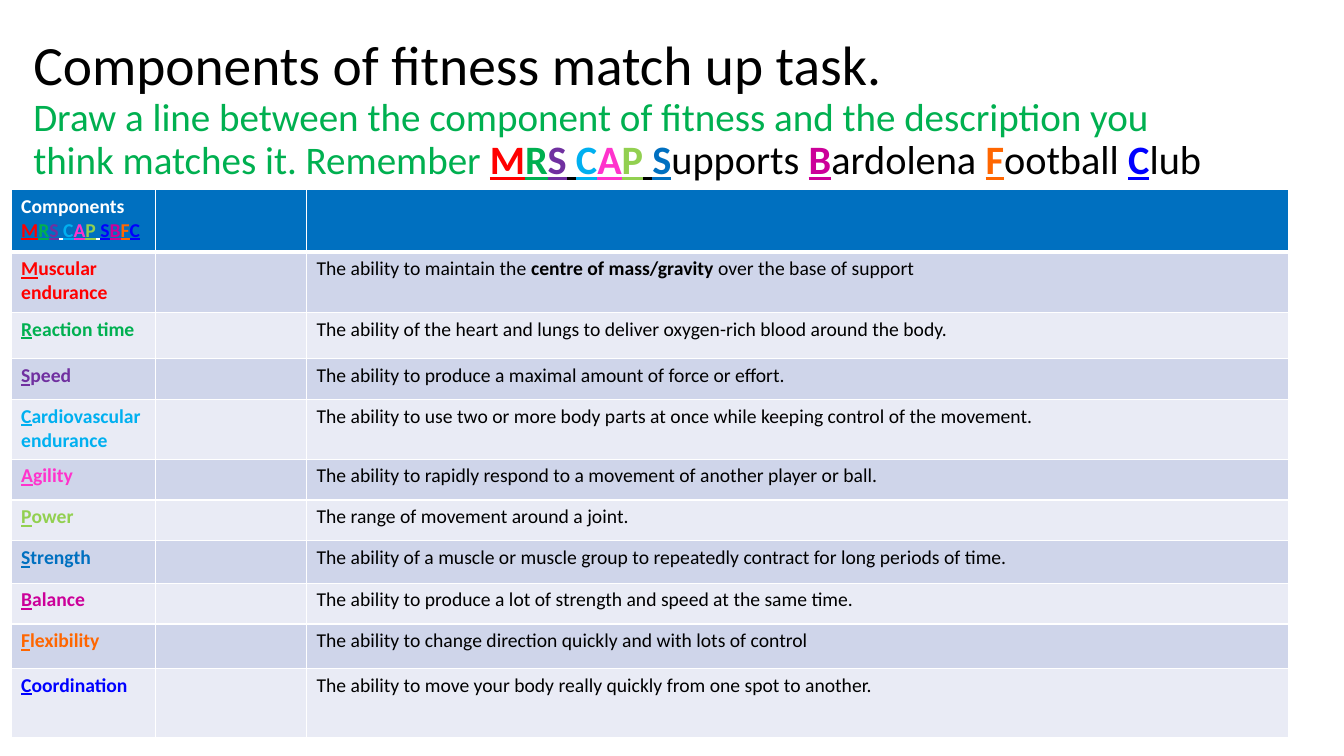
from lxml.etree import SubElement
from pptx import Presentation
from pptx.dml.color import RGBColor
from pptx.enum.text import MSO_ANCHOR, MSO_AUTO_SIZE, PP_ALIGN
from pptx.oxml.ns import qn
from pptx.util import Emu, Pt

PX = 9144
COLOURS = {
    "black": "000000", "white": "FFFFFF", "header": "0070C0",
    "odd": "CFD5EA", "even": "E9EBF5", "red": "FF0000", "green": "00B050",
    "purple": "7030A0", "sky": "00B0F0", "pink": "FF33CC", "lime": "92D050",
    "azure": "0070C0", "magenta": "CC0099", "orange": "FF6600", "blue": "0000FF",
}
KEY = {"bold": True, "underline": True}
PLAIN = {"bold": False, "underline": False}
COMPONENTS = [
    ("Muscular endurance", "red", 60,
     ["The ability to maintain the ", "centre of mass/gravity ", "over the base of support"]),
    ("Reaction time", "green", 46,
     ["The ability of the heart and lungs to deliver oxygen-rich blood around the body."]),
    ("Speed", "purple", 40,
     ["The ability to produce a maximal amount of force or effort."]),
    ("Cardiovascular endurance", "sky", 59,
     ["The ability to use two or more body parts at once while keeping control of the movement."]),
    ("Agility", "pink", 40,
     ["The ability to rapidly respond to a movement of another player or ball."]),
    ("Power", "lime", 40, ["The range of movement around a joint."]),
    ("Strength", "azure", 42,
     ["The ability of a muscle or muscle group to repeatedly contract for long periods of time."]),
    ("Balance", "magenta", 40,
     ["The ability to produce a lot of strength and speed at the same time."]),
    ("Flexibility", "orange", 44,
     ["The ability to change direction quickly and with lots of control"]),
    ("Coordination", "blue", 69,
     ["The ability to move your body really quickly from one spot to another."]),
]
COLUMNS = [143, 150, 974]
HEADER_HEIGHT = 62


def initials(letters, colours, gap):
    return [(letter, gap if letter == " " else next(colours), KEY) for letter in letters]


class Sheet:
    """Holds the style and the current slide, and adds its elements."""

    def __init__(self, deck, font):
        self.font = font
        self.page = deck.slides.add_slide(deck.slide_layouts[5])

    def colour(self, name):
        return RGBColor.from_string(COLOURS[name])

    def add_spans(self, para, spans, size):
        for text, colour, extra in spans:
            span = para.add_run()
            span.text = text
            values = {"name": self.font, "size": Pt(size), **extra}
            for name, value in values.items():
                setattr(span.font, name, value)
            span.font.color.rgb = self.colour(colour)

    def title(self, place, heading, spans):
        box = self.page.shapes.title
        for name, value in zip(("left", "top", "width", "height"), place):
            setattr(box, name, Emu(value * PX))
        frame = box.text_frame
        layout = {"word_wrap": True, "auto_size": MSO_AUTO_SIZE.NONE,
                  "vertical_anchor": MSO_ANCHOR.MIDDLE}
        for name, value in layout.items():
            setattr(frame, name, value)
        para = frame.paragraphs[0]
        para.alignment = PP_ALIGN.LEFT
        para.line_spacing = 0.9
        self.add_spans(para, [(heading, "black", PLAIN)], 39.6)
        para.add_line_break()
        self.add_spans(para, spans[:1], 27.9)
        self.add_spans(para, spans[1:], 28.8)

    def table(self, left, top, columns, heights):
        frame = self.page.shapes.add_table(
            len(heights), len(columns), Emu(left * PX), Emu(top * PX),
            Emu(sum(columns) * PX), Emu(sum(heights) * PX))
        for column, width in zip(frame.table.columns, columns):
            column.width = Emu(width * PX)
        for row, height in zip(frame.table.rows, heights):
            row.height = Emu(height * PX)
        return frame.table

    def cell(self, cell, fill, spans, borders):
        properties = cell._tc.get_or_add_tcPr()
        for side, width in borders.items():
            line = SubElement(properties, qn(f"a:ln{side}"), w=str(Pt(width)))
            solid = SubElement(line, qn("a:solidFill"))
            SubElement(solid, qn("a:srgbClr"), val=COLOURS["white"])
        cell.fill.solid()
        cell.fill.fore_color.rgb = self.colour(fill)
        self.add_spans(cell.text_frame.paragraphs[0], spans, 14)


def main():
    deck = Presentation()
    deck.slide_width, deck.slide_height = Emu(1333 * PX), Emu(750 * PX)
    sheet = Sheet(deck, "Calibri")
    palette = [colour for _, colour, _, _ in COMPONENTS]

    spans = [("Draw a line between the component of fitness and the description "
              "you think matches it. Remember ", "green", PLAIN)]
    spans += initials("MRS CAP ", iter(palette), "black")
    for word, colour in zip(("Supports ", "Bardolena ", "Football ", "Club"), palette[6:]):
        spans += [(word[0], colour, KEY), (word[1:], "black", PLAIN)]
    sheet.title((23, 37, 1208, 145), "Components of fitness match up task.", spans)

    letter_colours = palette[:6] + ["blue"] + palette[7:]
    header = [("Components ", "white", {"bold": True})]
    header += initials("MRS CAP SBFC", iter(letter_colours), "white")
    rows = [("header", [header, [], []])]
    for index, (name, colour, _, parts) in enumerate(COMPONENTS):
        label = [(name[0], colour, KEY), (name[1:], colour, {"bold": True, "underline": False})]
        description = [(part, "black", {"bold": place == 1}) for place, part in enumerate(parts)]
        rows.append(("even" if index % 2 else "odd", [label, [], description]))

    heights = [HEADER_HEIGHT] + [height for _, _, height, _ in COMPONENTS]
    table = sheet.table(11, 188, COLUMNS, heights)
    for row, (fill, contents) in enumerate(rows):
        borders = {"L": 1, "R": 1, "T": 3 if row == 1 else 1, "B": 3 if row == 0 else 1}
        for column, content in enumerate(contents):
            sheet.cell(table.cell(row, column), fill, content, borders)
    deck.save("out.pptx")


if __name__ == "__main__":
    main()
